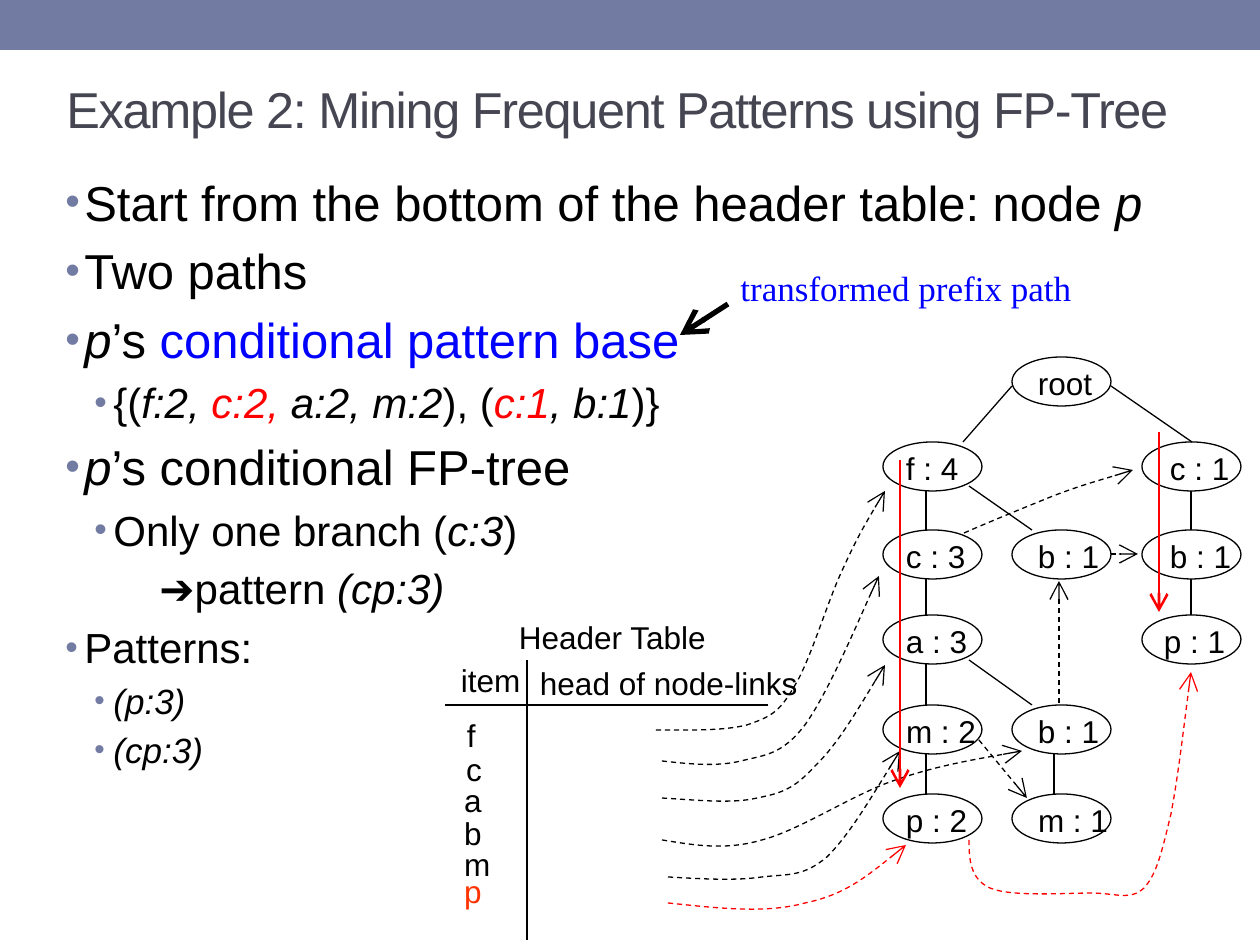
"""Build the slide on mining frequent patterns with an FP-tree."""
import dataclasses

import pptx
import pptx.dml.color
import pptx.enum.dml
import pptx.enum.shapes
import pptx.enum.text
import pptx.oxml
import pptx.oxml.ns
import pptx.util

SCALE = 914400 / 126


def emu(px):
    return pptx.util.Emu(round(px * SCALE))


def rgb(code):
    return pptx.dml.color.RGBColor.from_string(code)


def node(tag, inner="", **attrs):
    pairs = "".join(f' {key}="{val}"' for key, val in attrs.items())
    space = pptx.oxml.ns.nsdecls("a")
    return pptx.oxml.parse_xml(f"<a:{tag} {space}{pairs}>{inner}</a:{tag}>")


@dataclasses.dataclass
class Theme:
    sans: str = "Arial"
    serif: str = "Times New Roman"
    bar: str = "727CA3"
    title: str = "464653"
    ink: str = "000000"
    blue: str = "0000FF"
    red: str = "FF0000"
    warm: str = "FF3300"
    head: float = 28.8
    big: int = 28
    mid: int = 24
    small: int = 20
    label: int = 18
    thin: float = 0.75


class Board:
    def __init__(self, theme, slide):
        self.theme = theme
        self.shapes = slide.shapes

    def font(self, run, size, color=None, face=None, slant=False):
        run.font.size = pptx.util.Pt(size)
        run.font.name = face or self.theme.sans
        run.font.italic = slant
        run.font.color.rgb = rgb(color or self.theme.ink)

    def stroke(self, line, color=None, width=None, dash=False, arrow=False):
        line.color.rgb = rgb(color or self.theme.ink)
        line.width = pptx.util.Pt(width or self.theme.thin)
        if dash:
            line.dash_style = pptx.enum.dml.MSO_LINE.DASH
        if arrow:
            tail = node("tailEnd", type="arrow", w="lg", len="lg")
            line._get_or_add_ln().append(tail)

    def bar(self, x, y, w, h):
        kind = pptx.enum.shapes.MSO_SHAPE.RECTANGLE
        shape = self.shapes.add_shape(kind, *map(emu, (x, y, w, h)))
        shape.shadow.inherit = False
        shape.fill.solid()
        shape.fill.fore_color.rgb = rgb(self.theme.bar)
        shape.line.fill.background()

    def oval(self, x, y, w, h):
        kind = pptx.enum.shapes.MSO_SHAPE.OVAL
        shape = self.shapes.add_shape(kind, *map(emu, (x, y, w, h)))
        shape.shadow.inherit = False
        shape.fill.background()
        self.stroke(shape.line)

    def line(self, x1, y1, x2, y2, **style):
        kind = pptx.enum.shapes.MSO_CONNECTOR.STRAIGHT
        link = self.shapes.add_connector(kind, *map(emu, (x1, y1, x2, y2)))
        self.stroke(link.line, **style)
        link._element.spPr.append(node("effectLst"))

    def curve(self, start, *parts, color=None):
        pen = self.shapes.build_freeform(*map(emu, start))
        pen.add_line_segments([tuple(map(emu, part[4:])) for part in parts], close=False)
        shape = pen.convert_to_shape()
        legs = shape._element.findall(".//" + pptx.oxml.ns.qn("a:lnTo"))
        for leg, part in zip(legs, parts):
            dots = "".join(
                f'<a:pt x="{emu(x) - shape.left}" y="{emu(y) - shape.top}"/>'
                for x, y in zip(part[::2], part[1::2]))
            leg.getparent().replace(leg, node("cubicBezTo", dots))
        shape.shadow.inherit = False
        shape.fill.background()
        self.stroke(shape.line, color, dash=True, arrow=True)

    def frame(self, x, y, w, h, pad=True):
        frame = self.shapes.add_textbox(*map(emu, (x, y, w, h))).text_frame
        frame.word_wrap = True
        if not pad:
            frame.margin_left = frame.margin_right = 0
            frame.margin_top = frame.margin_bottom = 0
        return frame

    def text(self, words, x, y, w, h=38, size=None, color=None, face=None, pad=False):
        frame = self.frame(x, y, w, h, pad)
        frame.text = words
        run = frame.paragraphs[0].runs[0]
        self.font(run, size or self.theme.label, color, face)
        return frame

    def title(self, words, *box):
        theme = self.theme
        frame = self.text(words, *box, size=theme.head, color=theme.title, pad=True)
        frame.vertical_anchor = pptx.enum.text.MSO_ANCHOR.MIDDLE
        frame.paragraphs[0].runs[0].font._element.set("spc", "-75")

    def list(self, items, *box):
        frame = self.frame(*box)
        for i, (left, size, runs) in enumerate(items):
            para = frame.add_paragraph() if i else frame.paragraphs[0]
            for words, slant, color in runs:
                run = para.add_run()
                run.text = words
                self.font(run, size, color, slant=slant)
            props = para._p.get_or_add_pPr()
            mark = left < 90
            para.level = int(left == 48)
            props.set("marL", str(emu(left)))
            props.set("indent", str(emu(-19 if mark else 0)))
            props.append(node("spcBef", '<a:spcPct val="20000"/>'))
            if mark:
                props.append(node("buClr", f'<a:srgbClr val="{self.theme.bar}"/>'))
                props.append(node("buSzPct", val=85000))
                props.append(node("buFont", typeface=self.theme.sans))
                props.append(node("buChar", char="•"))


def main():
    deck = pptx.Presentation()
    deck.slide_width, deck.slide_height = emu(1260), emu(945)
    theme = Theme()
    board = Board(theme, deck.slides.add_slide(deck.slide_layouts[6]))
    ink, blue, red = theme.ink, theme.blue, theme.red
    big, mid, small = theme.big, theme.mid, theme.small

    board.bar(0, 0, 1260, 50)
    board.title("Example 2: Mining Frequent Patterns using FP-Tree", 54, 40, 1134, 136)
    board.list([
        (19, big, [("Start from the bottom of the header table: node ", False, ink),
                   ("p", True, ink)]),
        (19, big, [("Two paths", False, ink)]),
        (19, big, [("p", True, ink), ("’s ", False, ink),
                   ("conditional pattern base", False, blue)]),
        (48, mid, [("{(", False, ink), ("f:2, ", True, ink), ("c:2,", True, red),
                   (" a:2, m:2", True, ink), ("), (", False, ink),
                   ("c:1", True, red), (", b:1", True, ink), (")}", False, ink)]),
        (19, big, [("p", True, ink), ("’s conditional FP-tree", False, ink)]),
        (48, mid, [("Only one branch (", False, ink), ("c:3", True, ink),
                   (")", False, ink)]),
        (94, mid, [("➔pattern ", False, ink), ("(cp:3)", True, ink)]),
        (19, mid, [("Patterns:", False, ink)]),
        (48, small, [("(p:3)", True, ink)]),
        (48, small, [("(cp:3)", True, ink)]),
    ], 53, 166, 1143, 669)

    board.text("Header Table", 519, 618, 194)
    board.line(445, 705, 768, 705)
    board.line(527, 660, 527, 940)
    board.text("item", 461, 661, 76)
    board.text("head of node-links", 540, 664, 266)
    for item, x, y in (("f", 467, 716), ("c", 466, 750), ("a", 464, 781),
                       ("b", 464, 814), ("m", 464, 845), ("p", 464, 872)):
        board.text(item, x, y, 29, color=theme.warm if item == "p" else ink)

    board.curve((656, 730), (690, 730, 723, 731, 747, 725), (770, 717, 779, 713, 794, 687),
                (810, 662, 827, 603, 842, 571), (857, 538, 871, 514, 885, 491))
    board.curve((662, 761), (689, 764, 717, 767, 741, 761), (765, 755, 782, 755, 805, 725),
                (828, 693, 867, 601, 879, 576))
    board.curve((662, 798), (697, 800, 732, 804, 757, 798), (782, 793, 794, 789, 815, 766),
                (837, 745, 861, 704, 885, 665))
    board.curve((662, 840), (693, 845, 725, 851, 762, 840), (800, 830, 847, 798, 890, 782),
                (932, 767, 977, 759, 1022, 751))
    board.curve((668, 877), (702, 879, 736, 881, 762, 877), (789, 874, 803, 877, 827, 857),
                (849, 835, 874, 793, 900, 751))
    board.curve((668, 903), (717, 908, 765, 914, 805, 903), (844, 895, 874, 871, 906, 845),
                color=red)

    rows = (357, 442, 530, 615, 705, 794)
    for x, shift, first, names in (
            (883, 23, 1, ("f : 4", "c : 3", "a : 3", "m : 2", "p : 2")),
            (1012, 26, 0, ("root", None, "b : 1", None, "b : 1", "m : 1")),
            (1142, 28, 1, ("c : 1", "b : 1", "p : 1"))):
        for name, y in zip(names, rows[first:]):
            if name:
                board.oval(x, y, 99, 49)
                inset = 22 if name == "p : 1" else shift
                board.text(name, x + inset, y + 7, 80 if "m" in name else 64)
    for x, first, last in ((926, 1, 5), (1054, 4, 5), (1191, 1, 3)):
        for top, base in zip(rows[first:last], rows[first + 1:last + 1]):
            board.line(x, top + 49, x, base)
    for ends in ((1192, 442, 1111, 386), (1012, 386, 963, 442),
                 (1032, 530, 969, 486), (1032, 705, 969, 660)):
        board.line(*ends)

    board.curve((964, 533), (994, 520, 1026, 507, 1053, 496),
                (1082, 485, 1108, 478, 1133, 470))
    board.curve((969, 840), (969, 859, 970, 879, 990, 888), (1011, 897, 1065, 893, 1091, 893),
                (1116, 893, 1130, 901, 1144, 888), (1157, 874, 1162, 851, 1171, 814),
                (1178, 777, 1184, 725, 1191, 672), color=red)
    board.curve((979, 740), (979, 740, 1003, 769, 1027, 798))
    board.curve((1059, 703), (1059, 703, 1059, 642, 1059, 581))
    board.curve((1111, 554), (1123, 554, 1134, 554, 1138, 554))
    for ends in ((900, 460, 900, 788), (1159, 432, 1159, 612)):
        board.line(*ends, color=red, width=1.5, arrow=True)
    board.text("transformed prefix path", 728, 260, 432, 55, small, blue, theme.serif, True)
    board.line(728, 304, 680, 335, width=3, arrow=True)
    deck.save("out.pptx")


if __name__ == "__main__":
    main()
